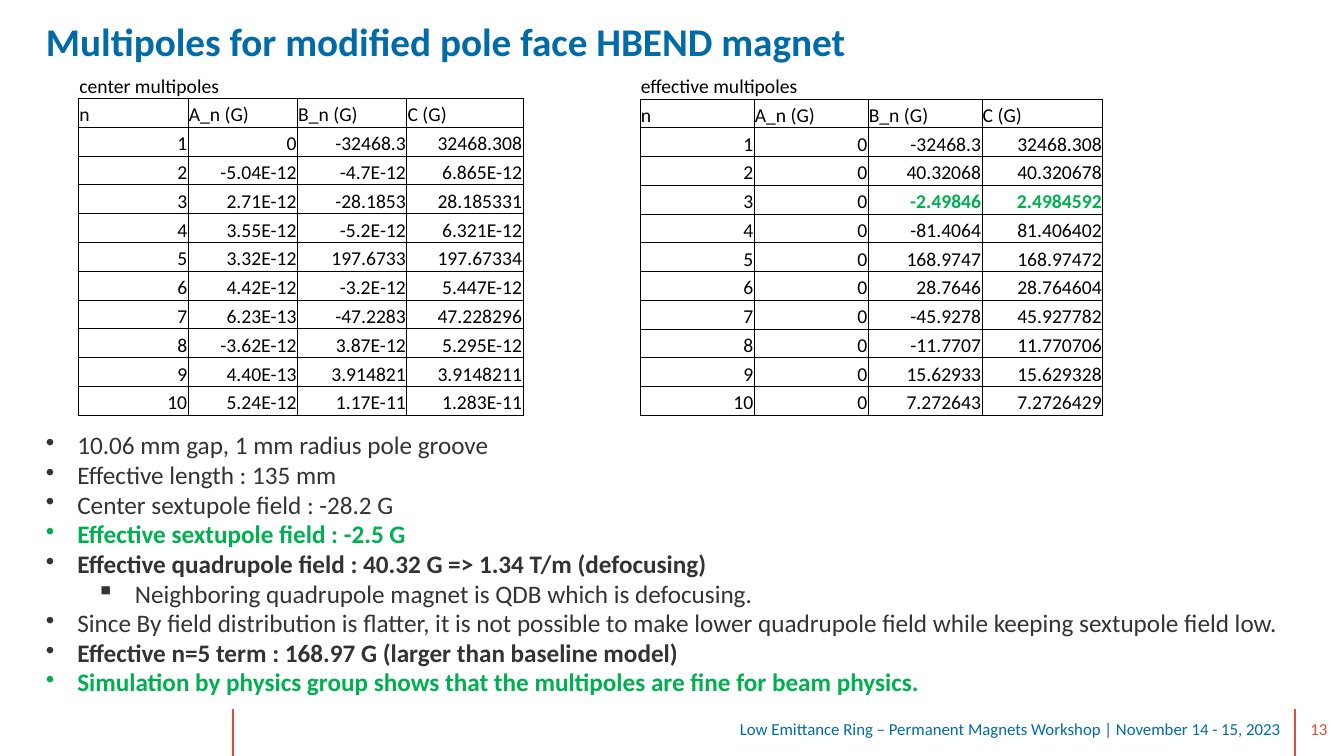
from dataclasses import dataclass

import pptx
import pptx.dml.color
import pptx.enum.shapes
import pptx.enum.text
import pptx.oxml
import pptx.oxml.ns
import pptx.util

Cm = pptx.util.Cm
Pt = pptx.util.Pt
ANCHOR = pptx.enum.text.MSO_ANCHOR
ALIGN = pptx.enum.text.PP_ALIGN


@dataclass(frozen=True)
class Theme:
    """Colours, font and type sizes of the deck."""
    font: str = "Calibri"
    blue: str = "006BA6"
    red: str = "E04E38"
    green: str = "00B050"
    ink: str = "313335"
    black: str = "000000"
    title: int = 28
    body: int = 18
    table: int = 14
    footer: int = 12


THEME = Theme()

COLUMNS = ("n", "A_n (G)", "B_n (G)", "C (G)")

CENTER_ROWS = (
    ("1", "0", "-32468.3", "32468.308"),
    ("2", "-5.04E-12", "-4.7E-12", "6.865E-12"),
    ("3", "2.71E-12", "-28.1853", "28.185331"),
    ("4", "3.55E-12", "-5.2E-12", "6.321E-12"),
    ("5", "3.32E-12", "197.6733", "197.67334"),
    ("6", "4.42E-12", "-3.2E-12", "5.447E-12"),
    ("7", "6.23E-13", "-47.2283", "47.228296"),
    ("8", "-3.62E-12", "3.87E-12", "5.295E-12"),
    ("9", "4.40E-13", "3.914821", "3.9148211"),
    ("10", "5.24E-12", "1.17E-11", "1.283E-11"),
)

EFFECTIVE_ROWS = (
    ("1", "0", "-32468.3", "32468.308"),
    ("2", "0", "40.32068", "40.320678"),
    ("3", "0", "-2.49846", "2.4984592"),
    ("4", "0", "-81.4064", "81.406402"),
    ("5", "0", "168.9747", "168.97472"),
    ("6", "0", "28.7646", "28.764604"),
    ("7", "0", "-45.9278", "45.927782"),
    ("8", "0", "-11.7707", "11.770706"),
    ("9", "0", "15.62933", "15.629328"),
    ("10", "0", "7.272643", "7.2726429"),
)

FINDINGS = (
    (0, "10.06 mm gap, 1 mm radius pole groove", THEME.ink, False),
    (0, "Effective length : 135 mm", THEME.ink, False),
    (0, "Center sextupole field : -28.2 G", THEME.ink, False),
    (0, "Effective sextupole field : -2.5 G", THEME.green, True),
    (0, "Effective quadrupole field : 40.32 G => 1.34 T/m (defocusing)", THEME.ink, True),
    (1, "Neighboring quadrupole magnet is QDB which is defocusing.", THEME.ink, False),
    (0, "Since By field distribution is flatter, it is not possible to make lower "
        "quadrupole field while keeping sextupole field low.", THEME.ink, False),
    (0, "Effective n=5 term : 168.97 G (larger than baseline model)", THEME.ink, True),
    (0, "Simulation by physics group shows that the multipoles are fine for beam physics.",
     THEME.green, True),
)

BULLETS = (("•", Cm(0.79), Cm(-0.79)), ("▪", Cm(2.24), Cm(-0.97)))


def add_span(para, text, size, color, bold=False):
    """Add one styled run to a paragraph."""
    span = para.add_run()
    span.text = text
    span.font.name = THEME.font
    span.font.size = Pt(size)
    span.font.bold = bold
    span.font.color.rgb = pptx.dml.color.RGBColor.from_string(color)


def add_box(page, left, top, width, height, anchor=ANCHOR.TOP, wrap=True):
    """Add an empty text box and return its text frame."""
    frame = page.shapes.add_textbox(left, top, width, height).text_frame
    frame.word_wrap = wrap
    frame.vertical_anchor = anchor
    return frame


def add_title(page, left, top, width, height):
    """Place the slide title."""
    frame = add_box(page, left, top, width, height)
    add_span(frame.paragraphs[0], "Multipoles for modified pole face HBEND magnet",
             THEME.title, THEME.blue, True)


def add_bullet(para, level):
    """Give a paragraph the bullet and indent of its level."""
    mark, margin, indent = BULLETS[level]
    para.level = level
    settings = para._p.get_or_add_pPr()
    settings.set("marL", str(margin))
    settings.set("indent", str(indent))
    bullet = pptx.oxml.parse_xml(
        f'<a:buChar {pptx.oxml.ns.nsdecls("a")} char="{mark}"/>')
    settings.append(bullet)


def add_findings(page, left, top, width, height):
    """Place the bulleted findings."""
    frame = add_box(page, left, top, width, height)
    for index, (level, text, color, bold) in enumerate(FINDINGS):
        para = frame.add_paragraph() if index else frame.paragraphs[0]
        add_bullet(para, level)
        para.line_spacing = 0.98
        add_span(para, text, THEME.body, color, bold)


def add_borders(cell, sides):
    """Draw thin black lines on the named sides of a cell."""
    settings = cell._tc.get_or_add_tcPr()
    for side in sides:
        settings.append(pptx.oxml.parse_xml(
            f'<a:ln{side} {pptx.oxml.ns.nsdecls("a")} w="{Pt(0.5)}"><a:solidFill>'
            f'<a:srgbClr val="{THEME.black}"/></a:solidFill></a:ln{side}>'))


def fill_cell(cell, text, sides, align, highlight):
    """Set the borders, margins and text of a table cell."""
    add_borders(cell, sides)
    cell.fill.background()
    cell.vertical_anchor = ANCHOR.BOTTOM
    cell.margin_left = cell.margin_right = cell.margin_top = Cm(0.02)
    cell.margin_bottom = 0
    para = cell.text_frame.paragraphs[0]
    para.alignment = align
    if text:
        color = THEME.green if highlight else THEME.black
        add_span(para, text, THEME.table, color, highlight)
    else:
        para._p.get_or_add_endParaRPr().set("sz", str(THEME.table * 100))


def add_multipoles(page, left, top, width, height, caption, caption_span, data, highlights=()):
    """Place a captioned multipole table with a slightly wider last column."""
    rows = ((caption, "", "", ""), COLUMNS) + data
    table = page.shapes.add_table(len(rows), len(COLUMNS), left, top, width, height).table
    table.first_row = table.horz_banding = False
    narrow = int((width - Cm(0.17)) / len(COLUMNS))
    for index, column in enumerate(table.columns):
        column.width = narrow if index < 3 else width - 3 * narrow
    for r, values in enumerate(rows):
        table.rows[r].height = int(height / len(rows))
        for c, text in enumerate(values):
            fill_cell(table.cell(r, c), text, "LRTB" if r else "B",
                      ALIGN.RIGHT if r > 1 else ALIGN.LEFT, text in highlights)
    table.cell(0, 0).merge(table.cell(0, caption_span - 1))


def add_rule(page, left, top, height):
    """Draw a vertical red rule."""
    rule = page.shapes.add_connector(
        pptx.enum.shapes.MSO_CONNECTOR.STRAIGHT, left, top, left, top + height)
    rule.line.color.rgb = pptx.dml.color.RGBColor.from_string(THEME.red)
    rule.line.width = Pt(1.5)
    rule._element.spPr.append(
        pptx.oxml.parse_xml(f'<a:effectLst {pptx.oxml.ns.nsdecls("a")}/>'))


def add_footer(page, left, top, width, height):
    """Place the footer rules, workshop name and page number."""
    for offset in (Cm(5.87), Cm(32.64)):
        add_rule(page, left + offset, top, height)
    event = add_box(page, left + Cm(18.21), top, Cm(14.33), Cm(1.02), ANCHOR.MIDDLE, False)
    event.margin_top = event.margin_bottom = Cm(0.25)
    event.paragraphs[0].alignment = ALIGN.RIGHT
    add_span(event.paragraphs[0],
             "Low Emittance Ring – Permanent Magnets Workshop | November 14 - 15, 2023",
             THEME.footer, THEME.blue)
    number = add_box(page, left + Cm(32.49), top + Cm(0.05), width - Cm(32.37), Cm(1.02),
                     ANCHOR.MIDDLE)
    number.margin_bottom = Cm(0.25)
    number.paragraphs[0].alignment = ALIGN.CENTER
    add_span(number.paragraphs[0], "13", THEME.footer, THEME.red)


def main():
    """Build the deck and save it."""
    deck = pptx.Presentation()
    deck.slide_width, deck.slide_height = Cm(33.87), Cm(19.05)
    page = deck.slides.add_slide(deck.slide_layouts[6])
    add_title(page, Cm(0.91), Cm(0.3), Cm(28.3), Cm(1.45))
    add_findings(page, Cm(0.91), Cm(10.74), Cm(31.95), Cm(7.19))
    add_multipoles(page, Cm(1.98), Cm(1.75), Cm(11.2), Cm(8.72),
                   "center multipoles", 2, CENTER_ROWS)
    add_multipoles(page, Cm(16.13), Cm(1.77), Cm(11.66), Cm(8.7),
                   "effective multipoles", 3, EFFECTIVE_ROWS, ("-2.49846", "2.4984592"))
    add_footer(page, Cm(0), Cm(17.86), deck.slide_width, Cm(1.19))
    deck.save("out.pptx")


if __name__ == "__main__":
    main()
